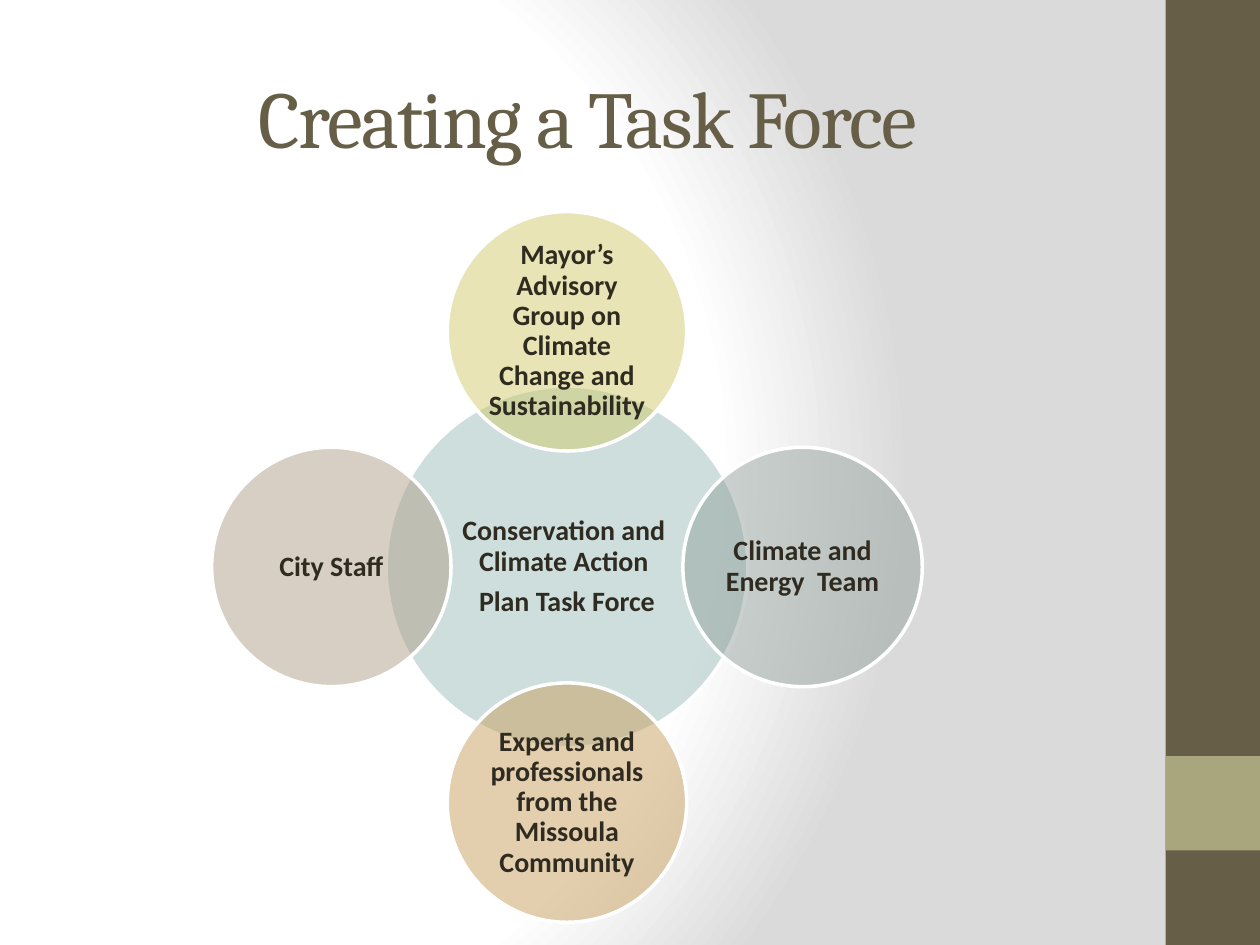
import math
from lxml import etree
from pptx import Presentation
from pptx.dml.color import RGBColor
from pptx.enum.shapes import MSO_SHAPE
from pptx.enum.text import MSO_ANCHOR, PP_ALIGN
from pptx.oxml import parse_xml
from pptx.oxml.ns import nsdecls, qn
from pptx.util import Inches, Pt

OVAL, RECT = MSO_SHAPE.OVAL, MSO_SHAPE.RECTANGLE
MIDDLE, CENTER = MSO_ANCHOR.MIDDLE, PP_ALIGN.CENTER

WIDTH, HEIGHT = 10, 7.5
TITLE = "Creating a Task Force"
BROWN, OLIVE, INK, WHITE = "675E47", "A9A57C", "2F2B20", "FFFFFF"
BACKGROUND_STOPS = [(0, WHITE), (75, WHITE), (100, "DADADA")]

HUB = ("Conservation and \vClimate Action \nPlan Task Force", "9CBEBD")
MEMBERS = [
    ("Mayor’s Advisory Group on Climate Change and Sustainability", "D2CB6C"),
    ("Climate and Energy  Team", "95A39D"),
    ("Experts and professionals from the Missoula Community", "C89F5D"),
    ("City Staff", "B1A089"),
]
CENTER_X = CENTER_Y = 4.5
HUB_SIZE, MEMBER_SIZE, ORBIT = 2.87, 1.9, 1.87
BAND = WIDTH - 9.25


def color(value):
    return RGBColor.from_string(value)


def paint_background(slide):
    stops = "".join(
        f'<a:gs pos="{share * 1000}"><a:srgbClr val="{value}"/></a:gs>'
        for share, value in BACKGROUND_STOPS)
    gradient = parse_xml(
        f'<a:gradFill {nsdecls("a")} rotWithShape="1"><a:gsLst>{stops}</a:gsLst>'
        '<a:path path="circle"><a:fillToRect l="20000" t="50000" r="100000" b="50000"/>'
        '</a:path></a:gradFill>')
    slide.background.fill.solid()
    solid = slide.element.xpath(".//p:bgPr/a:solidFill")[0]
    solid.getparent().replace(solid, gradient)


def add_filled(slide, preset, left, top, width, height, fill):
    shape = slide.shapes.add_shape(
        preset, Inches(left), Inches(top), Inches(width), Inches(height))
    shape.shadow.inherit = False
    shape.fill.solid()
    shape.fill.fore_color.rgb = color(fill)
    shape.line.fill.background()
    return shape


def add_label(slide, text, left, top, width, height, font, size, ink, inset, bold=False):
    label = slide.shapes.add_textbox(
        Inches(left), Inches(top), Inches(width), Inches(height))
    frame = label.text_frame
    frame.word_wrap = True
    frame.vertical_anchor = MIDDLE
    frame.margin_left = frame.margin_right = Inches(inset)
    frame.margin_top = frame.margin_bottom = Inches(min(inset, 0.05))
    frame.text = text
    for paragraph in frame.paragraphs:
        paragraph.alignment = CENTER
        for run in paragraph.runs:
            run.font.name = font
            run.font.size = Pt(size)
            run.font.bold = bold
            run.font.color.rgb = color(ink)
    return label


def add_circle(slide, text, fill, x, y, size):
    circle = add_filled(slide, OVAL, x - size / 2, y - size / 2, size, size, fill)
    circle.line.color.rgb = color(WHITE)
    circle.line.width = Pt(2)
    tint = circle.element.xpath("./p:spPr/a:solidFill/a:srgbClr")[0]
    etree.SubElement(tint, qn("a:alpha")).set("val", "50000")

    side = size / math.sqrt(2)
    label = add_label(slide, text, x - side / 2, y - side / 2, side, side,
                      "Calibri", 16, INK, 0.02, bold=True)
    for paragraph in label.text_frame.paragraphs:
        paragraph.line_spacing = 0.9
        paragraph.space_after = Pt(5.6)


def main():
    deck = Presentation()
    deck.slide_width, deck.slide_height = Inches(WIDTH), Inches(HEIGHT)
    slide = deck.slides.add_slide(deck.slide_layouts[6])
    paint_background(slide)
    add_filled(slide, RECT, WIDTH - BAND, 0, BAND, HEIGHT, BROWN)
    add_filled(slide, RECT, WIDTH - BAND, HEIGHT - 2 * BAND, BAND, BAND, OLIVE)

    title = add_label(slide, TITLE, 0.5, 0.3, 8.33, 1.25, "Cambria", 46, BROWN, 0.1)
    for properties in title.element.xpath(".//a:rPr"):
        properties.set("spc", "-100")

    add_circle(slide, *HUB, CENTER_X, CENTER_Y, HUB_SIZE)
    for index, (text, fill) in enumerate(MEMBERS):
        angle = math.tau * index / len(MEMBERS)
        add_circle(slide, text, fill, CENTER_X + ORBIT * math.sin(angle),
                   CENTER_Y - ORBIT * math.cos(angle), MEMBER_SIZE)
    deck.save("out.pptx")


if __name__ == "__main__":
    main()
